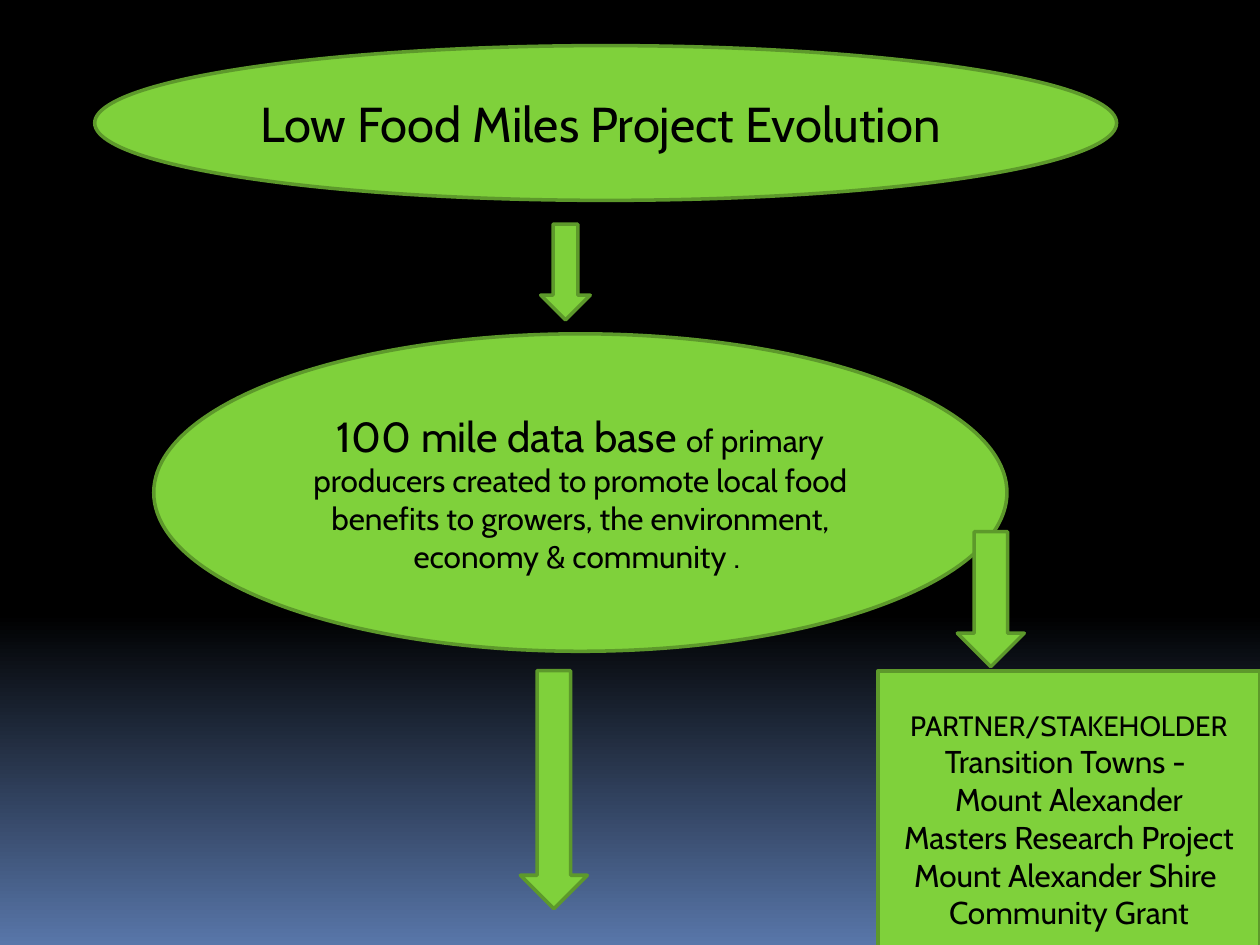
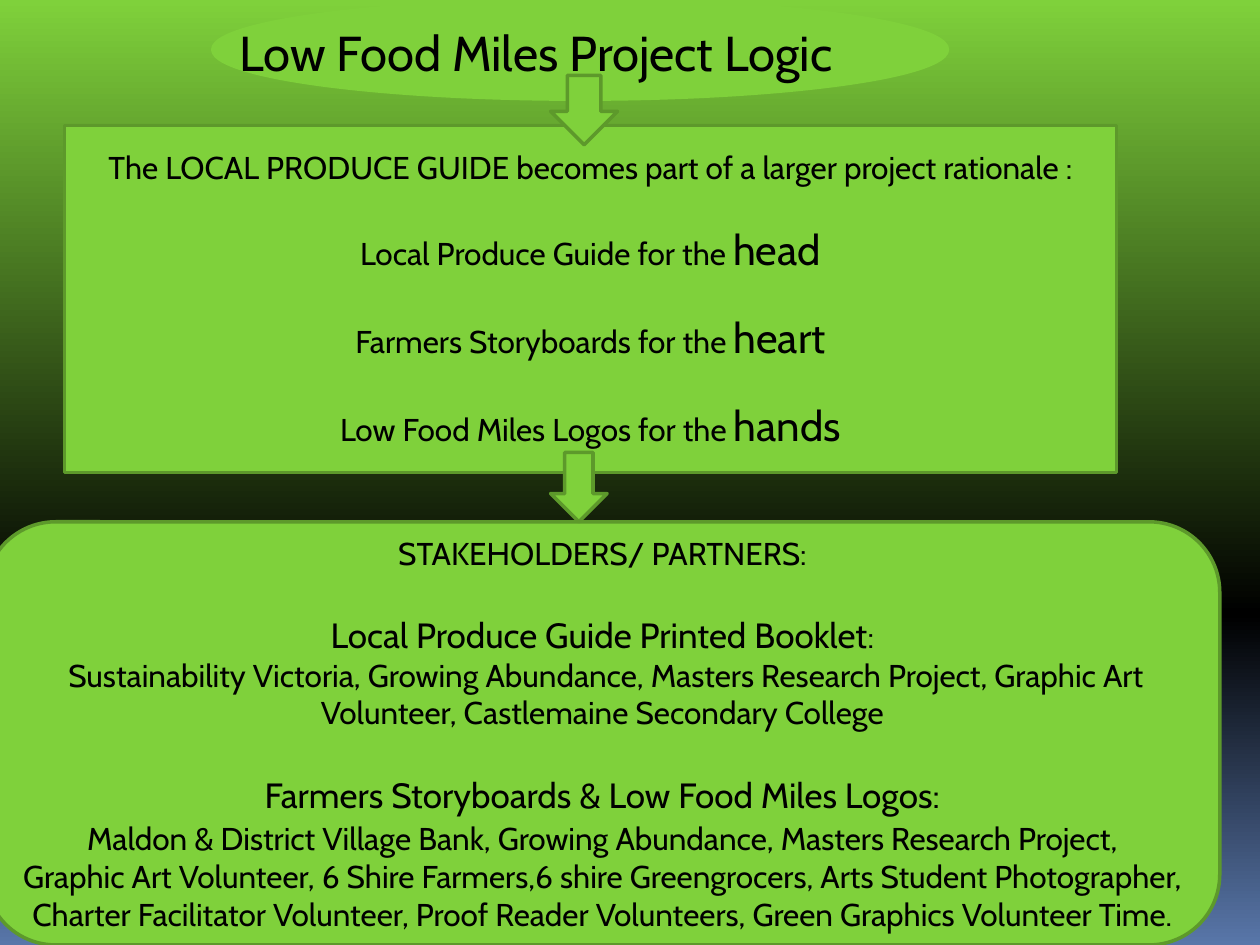
from copy import deepcopy

from pptx import Presentation
from pptx.dml.color import RGBColor
from pptx.enum.shapes import MSO_SHAPE as Kind
from pptx.enum.text import MSO_ANCHOR as Anchor, MSO_AUTO_SIZE as Fit, PP_ALIGN as Align
from pptx.util import Cm, Pt

FONT = "Cabin"
HEX = {"green": "7FD13B", "edge": "5D992B", "black": "000000", "blue": "5876A9"}
PLAIN = {
    "word_wrap": True, "auto_size": Fit.NONE, "vertical_anchor": Anchor.MIDDLE,
    "margin_left": 0, "margin_right": 0, "margin_top": 0, "margin_bottom": 0,
}
INSET = Cm(0.13)
LEFT = {
    "vertical_anchor": Anchor.TOP, "margin_left": INSET, "margin_right": INSET,
    "margin_top": INSET, "margin_bottom": INSET,
}


def tint(name):
    return RGBColor.from_string(HEX[name])


def apply(obj, vals):
    for key, val in vals.items():
        setattr(obj, key, val)


def place(shape, spot):
    apply(shape, dict(zip(("left", "top", "width", "height"), map(Cm, spot))))


def write(frame, paras, align=Align.CENTER, style=None):
    """Fill a frame from (space before, [(text, size), ...]) pairs."""
    apply(frame, {**PLAIN, **(style or {})})
    for num, (gap, runs) in enumerate(paras):
        para = frame.add_paragraph() if num else frame.paragraphs[0]
        apply(para, {"alignment": align, "space_before": Pt(gap)})
        for text, size in runs:
            para.add_run().text = text
            font = para.runs[-1].font
            apply(font, {"name": FONT, "size": Pt(size)})
            font.color.rgb = tint("black")


def shade(slide, top):
    """Give the slide a downward gradient that starts with the top colour."""
    fill = slide.background.fill
    fill.gradient()
    fill.gradient_angle = 270
    first = fill.gradient_stops[0]._gs
    first.addnext(deepcopy(first))
    stops = ((0, top), (0.65, "black"), (1, "blue"))
    for stop, (pos, name) in zip(fill.gradient_stops, stops):
        stop.position = pos
        stop.color.rgb = tint(name)


def block(slide, kind, spot, paras=(), edge="edge"):
    shape = slide.shapes.add_shape(kind, *map(Cm, spot))
    shape.shadow.inherit = False
    shape.fill.solid()
    shape.fill.fore_color.rgb = tint("green")
    shape.line.color.rgb = tint(edge)
    shape.line.width = Pt(2)
    write(shape.text_frame, paras)


def head(slide, text, spot, align=Align.CENTER, style=None):
    """Set the title and lift it above the shapes drawn so far."""
    title = slide.shapes.title
    place(title, spot)
    write(title.text_frame, [(0, [(text, 28)])], align, style)
    slide.shapes._spTree.append(title._element)


def start(deck, top):
    slide = deck.slides.add_slide(deck.slide_layouts[5])
    shade(slide, top)
    return slide


def growth(deck):
    slide = start(deck, "black")
    block(slide, Kind.OVAL, (1.91, 0.92, 20.6, 3.12))
    head(slide, "Low Food Miles Project Evolution ", (4.92, 1.8, 14.58, 1.37))
    block(slide, Kind.OVAL, (3.1, 6.73, 17.2, 6.4), [
        (0, [("100 mile data base ", 24),
             ("of primary producers created to promote local food benefits "
              "to growers, the environment, economy & community . ", 18)]),
    ])
    names = ("Transition Towns - ", "Mount Alexander", "Masters Research Project",
             "Mount Alexander Shire ", "Community Grant")
    block(slide, Kind.RECTANGLE, (17.7, 13.53, 7.7, 6),
          [(0, [("PARTNER/STAKEHOLDER", 16)])] + [(0, [(name, 18)]) for name in names])
    for spot in ((10.9, 4.52, 1, 1.93), (19.3, 10.72, 1.35, 2.72), (10.49, 13.52, 1.35, 4.8)):
        block(slide, Kind.DOWN_ARROW, spot)


def logic(deck):
    slide = start(deck, "green")
    block(slide, Kind.OVAL, (4.29, 0, 14.81, 2), edge="green")
    head(slide, "Low Food Miles Project Logic", (4.7, 0.33, 14, 1.37), Align.LEFT, LEFT)
    aims = (("Local Produce Guide", "head"), ("Farmers Storyboards", "heart"),
            ("Low Food Miles Logos", "hands"))
    block(slide, Kind.RECTANGLE, (1.3, 2.53, 21.21, 7), [
        (0, [("The LOCAL PRODUCE GUIDE becomes part of a larger project rationale :", 18)]),
    ] + [(21.6, [(f"{item} for the ", 18), (part, 24)]) for item, part in aims])
    block(slide, Kind.ROUNDED_RECTANGLE, (-0.3, 10.52, 24.89, 8.53), [
        (0, [("STAKEHOLDERS/ PARTNERS:", 18)]),
        (24, [("Local Produce Guide Printed Booklet", 20), (":", 18)]),
        (0, [(" Sustainability Victoria, Growing Abundance, Masters Research Project, "
              "Graphic Art Volunteer, Castlemaine Secondary College", 18)]),
        (24, [("Farmers Storyboards & Low Food Miles Logos:", 20)]),
        (2.4, [("Maldon & District Village Bank, Growing Abundance, "
                "Masters Research Project,", 18)]),
        (0, [("Graphic Art Volunteer, 6 Shire Farmers,6 shire Greengrocers, "
              "Arts Student Photographer,", 18)]),
        (0, [("Charter Facilitator Volunteer, Proof Reader Volunteers, "
              "Green Graphics Volunteer Time.", 18)]),
    ])
    for spot in ((11.1, 9.12, 1.14, 1.4), (11.1, 1.52, 1.35, 1.4)):
        block(slide, Kind.DOWN_ARROW, spot)


def main():
    deck = Presentation()
    apply(deck, {"slide_width": Cm(25.4), "slide_height": Cm(19.05)})
    growth(deck)
    logic(deck)
    deck.save("out.pptx")


if __name__ == "__main__":
    main()
